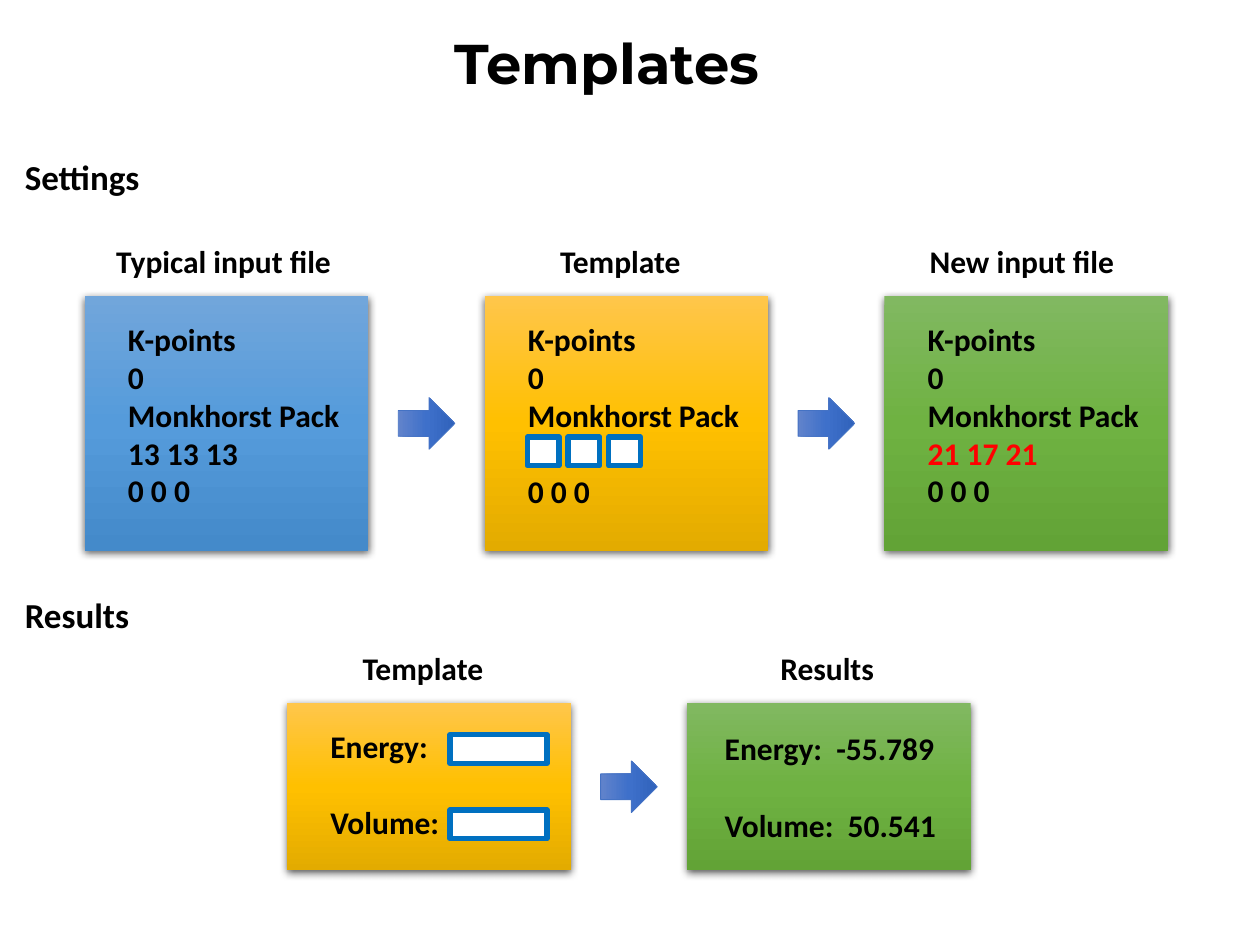
from copy import deepcopy

from lxml import etree
from pptx import Presentation
from pptx import util as u
from pptx.dml.color import RGBColor
from pptx.enum import shapes, text
from pptx.oxml import ns

BLUE = ("71A6DB", "559BDB", "448ACA")
GOLD = ("FFC64B", "FFC000", "E3AB00")
GREEN = ("81B861", "6FB242", "62A336")
ARROW = ("6183CB", "3E70CA", "3062BB")
BLACK, RED, SLOT_LINE = "000000", "FF0000", "0070C0"
CARD_W, PITCH = 5.72, 8.06
LINE_PT = 22


def rgb(value):
    """Turn a hex string into a colour."""
    return RGBColor.from_string(value)


def add_text(s, x, y, w, h, lines, size=18, font="Calibri", wrap=True):
    """Add bold lines, each given as (text, colour, blank lines before)."""
    tf = s.shapes.add_textbox(u.Cm(x), u.Cm(y), u.Cm(w), u.Cm(h)).text_frame
    tf.word_wrap = wrap
    tf.auto_size = text.MSO_AUTO_SIZE.SHAPE_TO_FIT_TEXT
    for i, (line, colour, gap) in enumerate(lines):
        p = tf.add_paragraph() if i else tf.paragraphs[0]
        p.text = line
        p.space_before = u.Pt(gap * LINE_PT)
        r = p.runs[0]
        r.font.name, r.font.size, r.font.bold = font, u.Pt(size), True
        r.font.color.rgb = rgb(colour)


def add_label(s, x, y, label, size=18):
    """Add a one-line label."""
    add_text(s, x, y, 5.08, 1, [(label, BLACK, 0)], size)


def add_box(s, kind, x, y, w, h):
    """Add a preset shape without a shadow."""
    sp = s.shapes.add_shape(kind, u.Cm(x), u.Cm(y), u.Cm(w), u.Cm(h))
    sp.shadow.inherit = False
    return sp


def fill_gradient(sp, colours):
    """Fill a shape from top to bottom with three evenly spaced colours."""
    sp.fill.gradient()
    sp.fill.gradient_angle = 270
    last = sp.element.xpath(".//a:gs")[-1]
    last.addnext(deepcopy(last))
    for i, (stop, colour) in enumerate(zip(sp.fill.gradient_stops, colours)):
        stop.color.rgb = rgb(colour)
        stop.position = i / 2


def add_shadow(sp):
    """Give a shape a soft shadow below it."""
    effects = sp.element.xpath(".//a:effectLst")[0]
    shadow = etree.SubElement(
        effects, ns.qn("a:outerShdw"), blurRad=str(u.Pt(4.5)),
        dist=str(u.Pt(1.5)), dir="5400000", algn="ctr", rotWithShape="0")
    colour = etree.SubElement(shadow, ns.qn("a:srgbClr"), val=BLACK)
    etree.SubElement(colour, ns.qn("a:alpha"), val="63000")


def add_card(s, x, y, h, colours, caption, caption_dx, lines, dx=0.62, dy=0.36):
    """Add a captioned card with its lines of text."""
    sp = add_box(s, shapes.MSO_SHAPE.RECTANGLE, x, y, CARD_W, h)
    fill_gradient(sp, colours)
    sp.line.fill.background()
    add_shadow(sp)
    add_label(s, x + caption_dx, y - 1.21, caption)
    add_text(s, x + dx, y + dy, 4.93, h - 2 * dy, lines)


def add_slot(s, x, y, w):
    """Add an empty slot to be filled in."""
    sp = add_box(s, shapes.MSO_SHAPE.RECTANGLE, x, y, w, 0.58)
    sp.fill.solid()
    sp.fill.fore_color.rgb = rgb("FFFFFF")
    sp.line.color.rgb = rgb(SLOT_LINE)
    sp.line.width = u.Pt(3)


def add_arrow(s, card_x, card_y, card_h):
    """Add an arrow in the middle of the gap after a card."""
    w, h = 1.04, 1.14
    x = card_x + (CARD_W + PITCH - w) / 2
    sp = add_box(s, shapes.MSO_SHAPE.DOWN_ARROW, x, card_y + (card_h - h) / 2, w, h)
    sp.rotation = 270
    fill_gradient(sp, ARROW)
    sp.line.color.rgb = rgb("4472C4")
    sp.line.width = u.Pt(0.5)


def k_point_lines(grid, colour=BLACK):
    """List the lines of an input file, leaving a gap if there is no grid."""
    head = [(line, BLACK, 0) for line in ("K-points", "0", "Monkhorst Pack")]
    middle = [(grid, colour, 0)] if grid else []
    return head + middle + [("0 0 0", BLACK, 0 if grid else 1)]


def add_settings(s, x, y, h):
    """Build the row that turns an input file into a new one."""
    add_label(s, 0.25, 3.02, "Settings", 20)
    cards = [
        (BLUE, "Typical input file", 0.38, k_point_lines("13 13 13")),
        (GOLD, "Template", 1.27, k_point_lines(None)),
        (GREEN, "New input file", 0.66, k_point_lines("21 17 21", RED)),
    ]
    for i, card in enumerate(cards):
        add_card(s, x + i * PITCH, y, h, *card)
    for i in range(2):
        add_arrow(s, x + i * PITCH, y, h)
    for i in range(3):
        add_slot(s, x + PITCH + 0.86 + i * 0.82, y + 2.84, 0.64)


def add_results(s, x, y, h):
    """Build the row that reads results through a template."""
    add_label(s, 0.25, 11.84, "Results", 20)
    add_card(s, x, y, h, GOLD, "Template", 1.27,
             [("Energy:", BLACK, 0), ("Volume:", BLACK, 1)])
    add_card(s, x + PITCH, y, h, GREEN, "Results", 1.63,
             [("Energy:  -55.789", BLACK, 0), ("Volume:  50.541", BLACK, 1)],
             0.51, 0.41)
    add_arrow(s, x, y, h)
    for i in range(2):
        add_slot(s, x + 3.28, y + 0.64 + i * 1.52, 1.96)


def main():
    """Build the slide and save it."""
    prs = Presentation()
    prs.slide_width, prs.slide_height = u.Cm(25.4), u.Cm(19.05)
    s = prs.slides.add_slide(prs.slide_layouts[6])
    add_text(s, 8.92, 0.46, 7.01, 1.63, [("Templates", BLACK, 0)], 32,
             "Montserrat", False)
    add_settings(s, 1.71, 5.97, 5.13)
    add_results(s, 5.79, 14.17, 3.38)
    prs.save("out.pptx")


if __name__ == "__main__":
    main()
